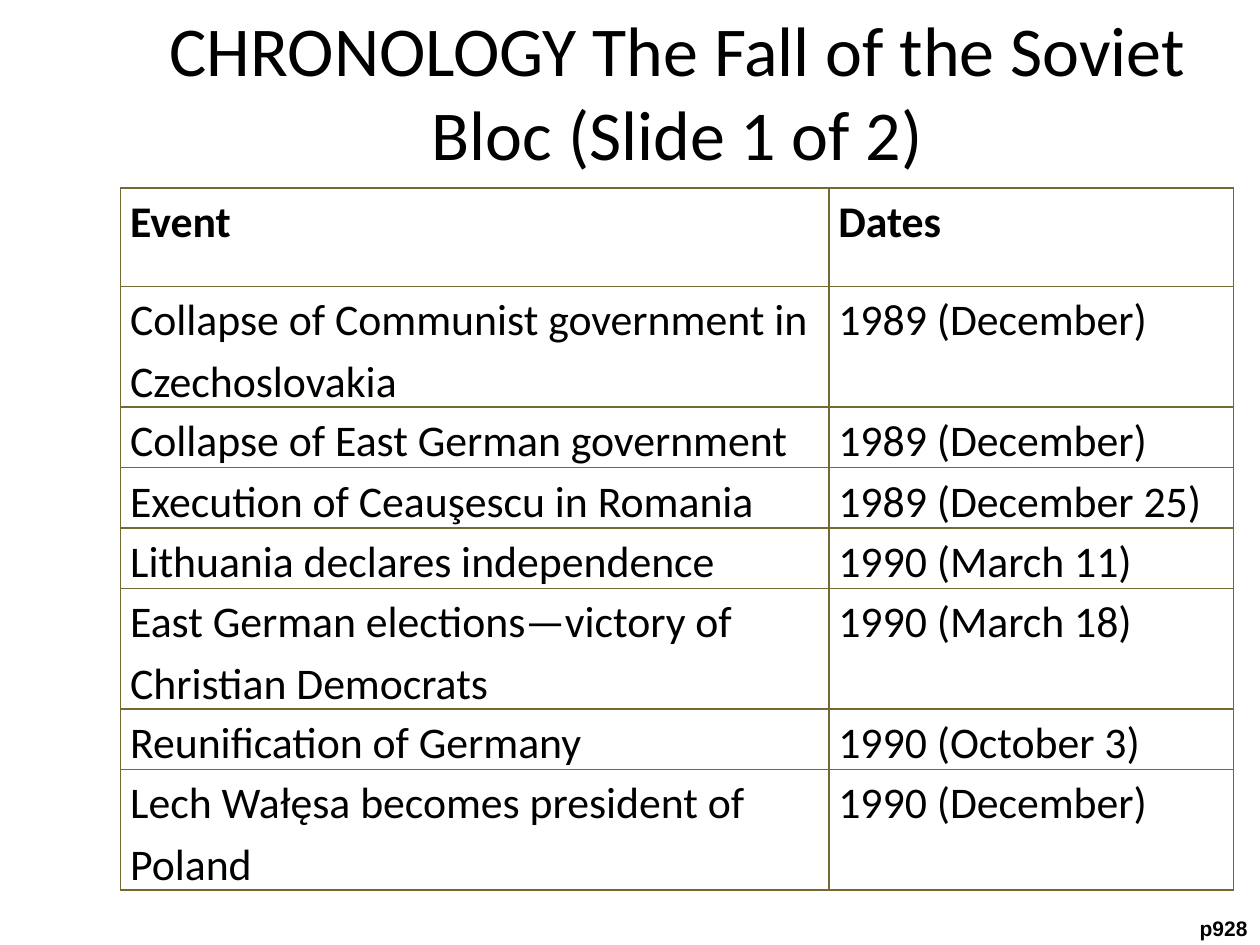
from pptx import Presentation
from pptx.util import Pt
from pptx.dml.color import RGBColor as Rgb
from pptx.enum.text import PP_ALIGN as Align, MSO_ANCHOR as Anchor, MSO_AUTO_SIZE as Fit
from pptx.oxml import parse_xml
from pptx.oxml.ns import nsdecls

# Content
TITLE = "CHRONOLOGY The Fall of the Soviet Bloc (Slide 1 of 2)"
PAGE = "p928"
HEAD = ("Event", "Dates")
# event, date, lines of text
EVENTS = [
    ("Collapse of Communist government in Czechoslovakia", "1989 (December)", 2),
    ("Collapse of East German government", "1989 (December)", 1),
    ("Execution of Ceauşescu in Romania", "1989 (December 25)", 1),
    ("Lithuania declares independence", "1990 (March 11)", 1),
    ("East German elections—victory of Christian Democrats", "1990 (March 18)", 2),
    ("Reunification of Germany", "1990 (October 3)", 1),
    ("Lech Wałęsa becomes president of Poland", "1990 (December)", 2),
]

THEME = {
    "font": "Calibri", "note font": "Arial",
    "title": 40, "cell": 25, "note": 12,
    "ink": "000000", "rule": "746833",
}
LEFT, TOP = 69, 107.3
COLS = (404.7, 231.3)
HEAD_H, LINE_H = 56.4, 34.5


def write(para, text, size, font="font", bold=False):
    run = para.add_run()
    run.text = text
    face = run.font
    face.name, face.size, face.bold = THEME[font], Pt(THEME[size]), bold
    face.color.rgb = Rgb.from_string(THEME["ink"])


def frame(cell):
    props = cell._tc.get_or_add_tcPr()
    for pos, side in enumerate("LRTB"):
        props.insert(pos, parse_xml(
            f'<a:ln{side} {nsdecls("a")} w="{Pt(1)}"><a:solidFill>'
            f'<a:srgbClr val="{THEME["rule"]}"/></a:solidFill></a:ln{side}>'))


def fill(cell, text, bold):
    cell.fill.background()
    cell.margin_left = cell.margin_right = Pt(5.4)
    cell.margin_top = cell.margin_bottom = 0
    cell.vertical_anchor = Anchor.TOP
    para = cell.text_frame.paragraphs[0]
    para.line_spacing = 1.15
    write(para, text, "cell", bold=bold)
    frame(cell)


deck = Presentation()
deck.slide_width, deck.slide_height = Pt(720), Pt(540)
slide = deck.slides.add_slide(deck.slide_layouts[5])

# Title
title = slide.shapes.title
title.left, title.top, title.width, title.height = Pt(54), Pt(36.7), Pt(666), Pt(30.2)
box = title.text_frame
box.auto_size = Fit.NONE
box.vertical_anchor = Anchor.MIDDLE
box.paragraphs[0].alignment = Align.CENTER
write(box.paragraphs[0], TITLE, "title")

# Page reference
note = slide.shapes.add_textbox(Pt(674.6), Pt(519.8), Pt(45.4), Pt(21.6)).text_frame
note.word_wrap = False
note.auto_size = Fit.SHAPE_TO_FIT_TEXT
note.paragraphs[0].alignment = Align.RIGHT
write(note.paragraphs[0], PAGE, "note", "note font", True)

# Chronology table
rows = [HEAD] + [(event, date) for event, date, _ in EVENTS]
highs = [HEAD_H] + [LINE_H * lines for _, _, lines in EVENTS]
grid = slide.shapes.add_table(len(rows), len(COLS), Pt(LEFT), Pt(TOP),
                              Pt(sum(COLS)), Pt(sum(highs))).table
grid.horz_banding = grid.first_row = False
for col, wide in zip(grid.columns, COLS):
    col.width = Pt(wide)
for r, (row, high) in enumerate(zip(rows, highs)):
    grid.rows[r].height = Pt(high)
    for c, text in enumerate(row):
        fill(grid.cell(r, c), text, r == 0)

deck.save("out.pptx")
